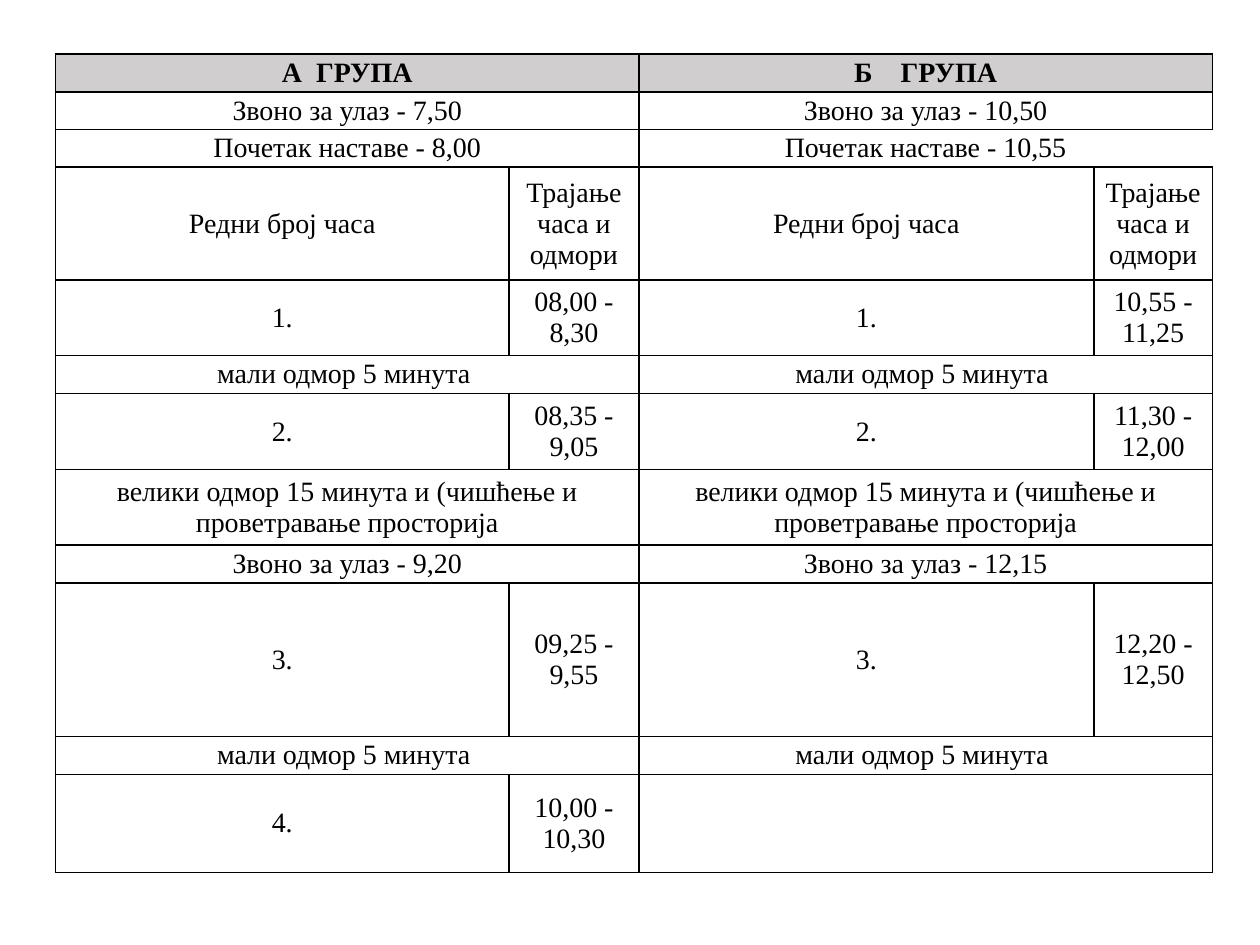
from dataclasses import dataclass

from lxml.etree import SubElement
from pptx import Presentation
from pptx.dml.color import RGBColor
from pptx.enum.text import MSO_ANCHOR as Anchor, PP_ALIGN as Align
from pptx.oxml.ns import qn
from pptx.util import Cm, Pt


@dataclass(frozen=True)
class Theme:
    font: str = "Times New Roman"
    size: int = 16
    ink: str = "000000"
    header: str = "D0CECE"
    border: int = 1


theme = Theme()


def add_border(cell, side, visible):
    ln = SubElement(cell._tc.get_or_add_tcPr(), qn(f"a:ln{side}"), w=str(Pt(theme.border)))
    if visible:
        fill = SubElement(ln, qn("a:solidFill"))
        SubElement(fill, qn("a:srgbClr"), val=theme.ink)
    else:
        SubElement(ln, qn("a:noFill"))


HEADING = ("Редни број часа", "Трајање часа и одмори")
SHORT_BREAK = ("мали одмор 5 минута ",)
LONG_BREAK = ("велики одмор 15 минута и (чишћење и проветравање просторија",)

schedule = [
    (0.76, ("А  ГРУПА",), ("Б    ГРУПА",)),
    (0.76, ("Звоно за улаз - 7,50",), ("Звоно за улаз - 10,50",)),
    (0.76, ("Почетак наставе - 8,00",), ("Почетак наставе - 10,55",)),
    (2.28, HEADING, HEADING),
    (1.52, ("1.", "08,00 - 8,30"), ("1.", "10,55 - 11,25")),
    (0.76, SHORT_BREAK, SHORT_BREAK),
    (1.54, ("2.", "08,35 - 9,05"), ("2.", "11,30 - 12,00")),
    (1.52, LONG_BREAK, LONG_BREAK),
    (0.76, ("Звоно за улаз - 9,20",), ("Звоно за улаз - 12,15",)),
    (3.1, ("3.", "09,25 - 9,55"), ("3.", "12,20 - 12,50")),
    (0.76, SHORT_BREAK, SHORT_BREAK),
    (1.98, ("4.", "10,00 - 10,30"), ("",)),
]
col_widths = [9.14, 2.62, 9.17, 2.39]
OPEN_ROW = 2
LAST_COL = len(col_widths) - 1

prs = Presentation()
prs.slide_width, prs.slide_height = Cm(25.4), Cm(19.05)
s = prs.slides.add_slide(prs.slide_layouts[6])

heights = [height for height, *groups in schedule]
table = s.shapes.add_table(
    len(schedule), len(col_widths), Cm(1.12), Cm(1.09), Cm(sum(col_widths)), Cm(sum(heights))
).table
table.first_row = table.horz_banding = False
for col, width in zip(table.columns, col_widths):
    col.width = Cm(width)

for i, (height, *groups) in enumerate(schedule):
    table.rows[i].height = Cm(height)

    for j in range(len(col_widths)):
        cell = table.cell(i, j)
        for side in "LRTB":
            open_edge = i == OPEN_ROW and side == "R" and j >= LAST_COL - 1
            add_border(cell, side, not open_edge)
        if i == 0:
            cell.fill.solid()
            cell.fill.fore_color.rgb = RGBColor.from_string(theme.header)
        else:
            cell.fill.background()

    for start, texts in zip((0, 2), groups):
        if len(texts) == 1:
            table.cell(i, start).merge(table.cell(i, start + 1))
        for j, text in enumerate(texts, start):
            cell = table.cell(i, j)
            cell.vertical_anchor = Anchor.MIDDLE
            cell.margin_left = cell.margin_right = Cm(0.05)
            cell.margin_top = cell.margin_bottom = 0
            cell.text_frame.text = text
            p = cell.text_frame.paragraphs[0]
            p.alignment = Align.CENTER
            for r in p.runs:
                r.font.name = theme.font
                r.font.size = Pt(theme.size)
                r.font.bold = i == 0
                r.font.color.rgb = RGBColor.from_string(theme.ink)

prs.save("out.pptx")
